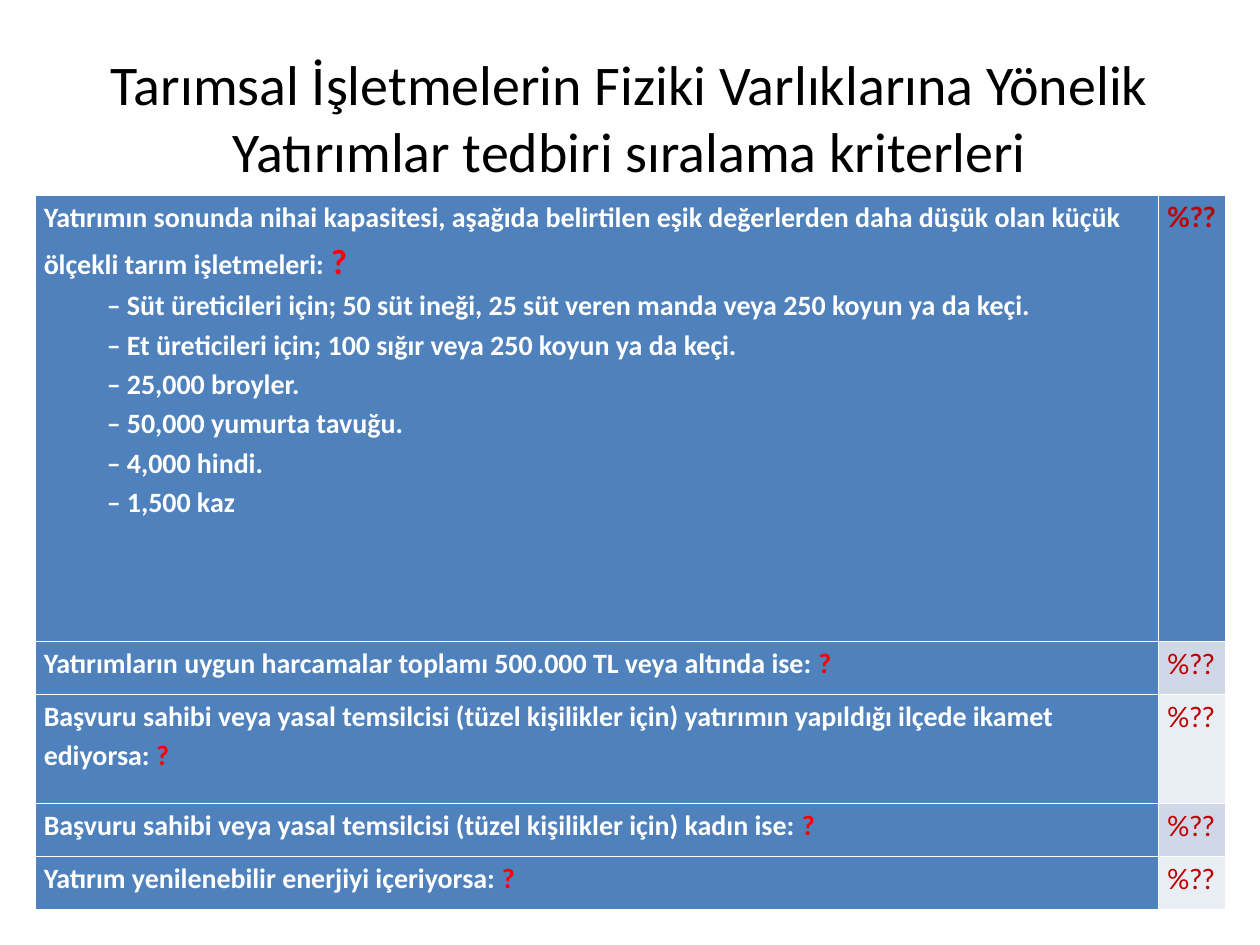
"""Build a slide with a table of ranking criteria for farm investments."""
from pptx import Presentation
from pptx.dml.color import RGBColor
from pptx.enum.text import MSO_ANCHOR as Anchor, PP_ALIGN as Align
from pptx.util import Pt

BLACK = RGBColor(0x00, 0x00, 0x00)
WHITE = RGBColor(0xFF, 0xFF, 0xFF)
RED = RGBColor(0xFF, 0x00, 0x00)
DARK = RGBColor(0xC0, 0x00, 0x00)
BLUE = RGBColor(0x4F, 0x81, 0xBD)
BANDS = RGBColor(0xE9, 0xED, 0xF4), RGBColor(0xD0, 0xD8, 0xE8)

TITLE = "Tarımsal İşletmelerin Fiziki Varlıklarına Yönelik Yatırımlar tedbiri sıralama kriterleri"
SCORE = "%??"
RULES = [
    ("Yatırımın sonunda nihai kapasitesi, aşağıda belirtilen eşik değerlerden daha düşük olan küçük ölçekli tarım işletmeleri: ", 255),
    ("Yatırımların uygun harcamalar toplamı 500.000 TL veya altında ise: ", 30.3),
    ("Başvuru sahibi veya yasal temsilcisi (tüzel kişilikler için) yatırımın yapıldığı ilçede ikamet ediyorsa: ", 62.4),
    ("Başvuru sahibi veya yasal temsilcisi (tüzel kişilikler için) kadın ise: ", 30.3),
    ("Yatırım yenilenebilir enerjiyi içeriyorsa: ", 30.3),
]
LIMITS = [
    "Süt üreticileri için; 50 süt ineği, 25 süt veren manda veya 250 koyun ya da keçi.",
    "Et üreticileri için; 100 sığır veya 250 koyun ya da keçi.",
    "25,000 broyler.",
    "50,000 yumurta tavuğu.",
    "4,000 hindi.",
    "1,500 kaz",
]


def write(para, text, size=16, color=WHITE, bold=True, face="Calibri"):
    run = para.add_run()
    run.text = text
    font = run.font
    font.size, font.bold, font.name = Pt(size), bold, face
    font.color.rgb = color


def space(para, indent=0):
    para.line_spacing = 1.15
    props = para._p.get_or_add_pPr()
    props.set("marL", str(Pt(indent)))
    props.set("indent", "0")


def fill(cell, color):
    cell.fill.solid()
    cell.fill.fore_color.rgb = color
    cell.margin_left = cell.margin_right = Pt(5)
    cell.margin_top = cell.margin_bottom = 0
    para = cell.text_frame.paragraphs[0]
    space(para)
    return para


def add_title(slide):
    title = slide.shapes.title
    title.left, title.top, title.width, title.height = Pt(36), Pt(21.6), Pt(648), Pt(90)
    frame = title.text_frame
    frame.vertical_anchor = Anchor.MIDDLE
    para = frame.paragraphs[0]
    para.alignment = Align.CENTER
    write(para, TITLE, size=32, color=BLACK, bold=False)


def add_rules(slide):
    high = sum(height for _, height in RULES)
    table = slide.shapes.add_table(len(RULES), 2, Pt(20), Pt(111.6), Pt(680.4), Pt(high)).table
    table.columns[0].width, table.columns[1].width = Pt(642), Pt(38.4)
    for i, (text, height) in enumerate(RULES):
        head = i == 0
        table.rows[i].height = Pt(height)
        para = fill(table.cell(i, 0), BLUE)
        write(para, text)
        write(para, "?", size=20 if head else 16, color=RED)
        score = fill(table.cell(i, 1), BLUE if head else BANDS[i % 2])
        write(score, SCORE, color=DARK, bold=head, face="Lato")
    frame = table.cell(0, 0).text_frame
    for limit in LIMITS:
        para = frame.add_paragraph()
        space(para, indent=36)
        write(para, f"– {limit}")


def main():
    deck = Presentation()
    deck.slide_width, deck.slide_height = Pt(720), Pt(540)
    slide = deck.slides.add_slide(deck.slide_layouts[5])
    add_title(slide)
    add_rules(slide)
    deck.save("out.pptx")


if __name__ == "__main__":
    main()
